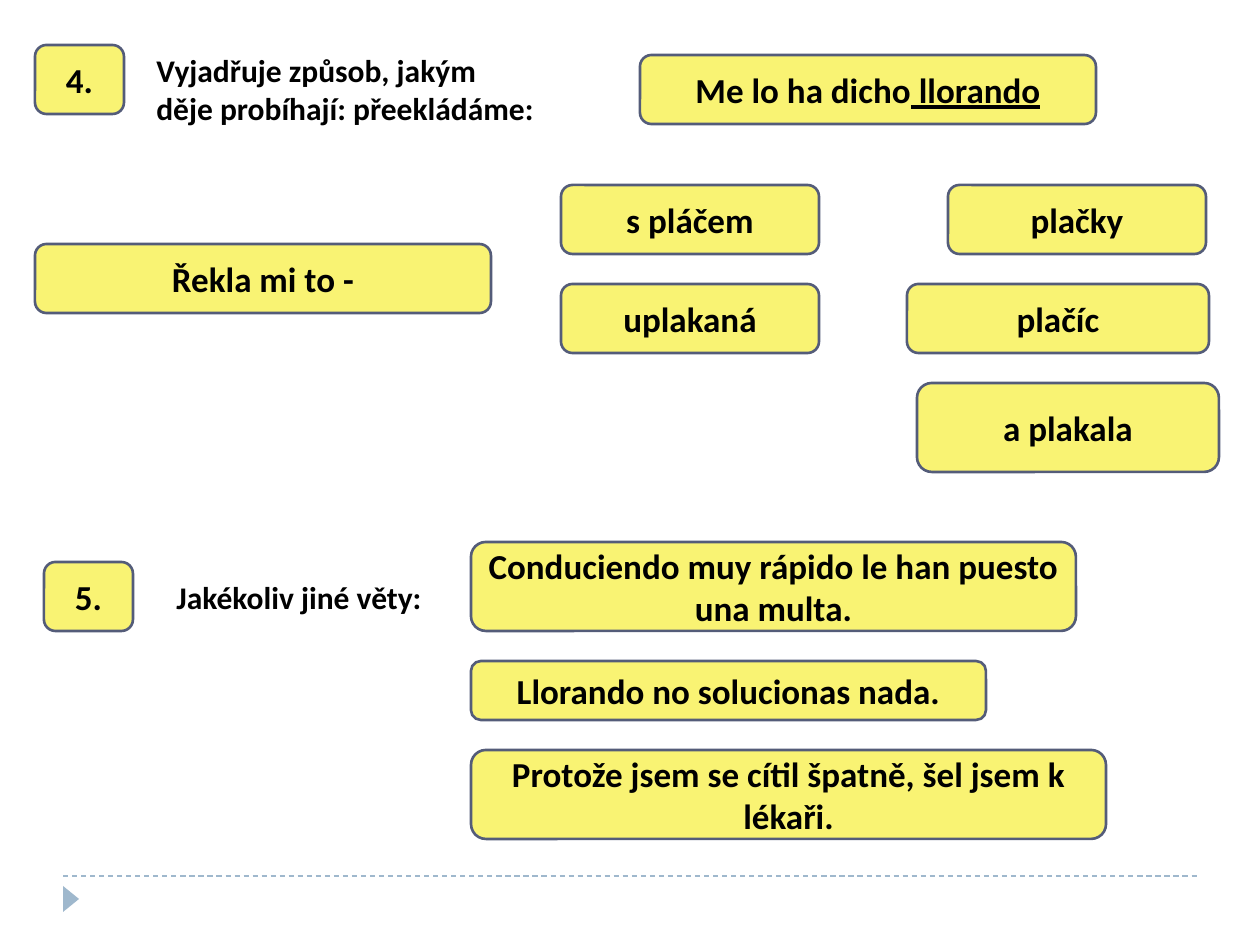
from dataclasses import dataclass

from lxml.etree import SubElement
from pptx import Presentation
from pptx.dml.color import RGBColor
from pptx.enum.dml import MSO_LINE
from pptx.enum.shapes import MSO_CONNECTOR, MSO_SHAPE
from pptx.enum.text import MSO_ANCHOR, MSO_AUTO_SIZE, PP_ALIGN
from pptx.oxml.ns import qn
from pptx.util import Pt

SCALE = 914400 / 126


@dataclass(frozen=True)
class Theme:
    fill: RGBColor = RGBColor(0xF9, 0xF3, 0x73)
    edge: RGBColor = RGBColor(0x54, 0x5C, 0x79)
    ink: RGBColor = RGBColor(0, 0, 0)
    foot: RGBColor = RGBColor(0x9F, 0xB8, 0xCD)
    font: str = "Calibri"
    card: int = 20
    label: int = 18


THEME = Theme()
ROW = 69
TALL = 89
SIDE = 471

# left, top, width, height, text, underlined text
CARDS = [
    (35, 45, 89, ROW, "4.", ""),
    (640, 55, 456, ROW, "Me lo ha dicho", " llorando"),
    (35, 244, 456, ROW, "Řekla mi to -", ""),
    (561, 185, 258, ROW, "s pláčem", ""),
    (561, 284, 258, ROW, "uplakaná", ""),
    (948, 185, 258, ROW, "plačky", ""),
    (907, 284, 302, ROW, "plačíc", ""),
    (917, 383, 302, TALL, "a plakala", ""),
    (44, 562, 89, ROW, "5.", ""),
    (SIDE, 542, 605, TALL,
     "Conduciendo muy rápido le han puesto una multa.", ""),
    (SIDE, 661, 515, 59, "Llorando no solucionas nada.", ""),
    (SIDE, 750, 635, TALL,
     "Protože jsem se cítil špatně, šel jsem k lékaři.", ""),
]
LABELS = [
    (144, 45, 444, 89,
     ["Vyjadřuje způsob, jakým", "děje probíhají: přeekládáme:"]),
    (164, 572, 299, 50, ["Jakékoliv jiné věty:"]),
]


def px(*vals):
    return [round(val * SCALE) for val in vals]


def style(item, form):
    for name, val in form.items():
        setattr(item, name, val)


def write(para, text, size, line=False):
    run = para.add_run()
    run.text = text
    style(run.font, {"name": THEME.font, "size": Pt(size), "bold": True})
    run.font.color.rgb = THEME.ink
    if line:
        run.font.underline = True


def paint(shape, color):
    shape.shadow.inherit = False
    shape.fill.solid()
    shape.fill.fore_color.rgb = color


def card(slide, left, top, width, height, text, under):
    shape = slide.shapes.add_shape(
        MSO_SHAPE.ROUNDED_RECTANGLE, *px(left, top, width, height))
    paint(shape, THEME.fill)
    shape.line.color.rgb = THEME.edge
    shape.line.width = Pt(1.5)
    frame = shape.text_frame
    style(frame, {"word_wrap": True, "vertical_anchor": MSO_ANCHOR.MIDDLE})
    para = frame.paragraphs[0]
    para.alignment = PP_ALIGN.CENTER
    write(para, text, THEME.card)
    if under:
        write(para, under, THEME.card, True)


def label(slide, left, top, width, height, lines):
    frame = slide.shapes.add_textbox(*px(left, top, width, height)).text_frame
    style(frame, {"word_wrap": False,
                  "auto_size": MSO_AUTO_SIZE.SHAPE_TO_FIT_TEXT})
    for num, text in enumerate(lines):
        para = frame.add_paragraph() if num else frame.paragraphs[0]
        para.alignment = PP_ALIGN.LEFT
        write(para, text, THEME.label)


def footer(slide):
    """Draw the dashed rule and the small arrow under it."""
    rule = slide.shapes.add_connector(
        MSO_CONNECTOR.STRAIGHT, *px(63, 876, 1197, 876))
    rule.line.color.rgb = THEME.foot
    style(rule.line, {"width": Pt(0.75), "dash_style": MSO_LINE.DASH})
    SubElement(rule._element.spPr, qn("a:effectLst"))
    mark = slide.shapes.add_shape(
        MSO_SHAPE.ISOSCELES_TRIANGLE, *px(58, 891, 26, 16))
    paint(mark, THEME.foot)
    mark.line.fill.background()
    mark.rotation = 90


def main():
    deck = Presentation()
    wide, high = px(1260, 945)
    style(deck, {"slide_width": wide, "slide_height": high})
    slide = deck.slides.add_slide(deck.slide_layouts[6])
    footer(slide)
    for item in CARDS:
        card(slide, *item)
    for item in LABELS:
        label(slide, *item)
    deck.save("out.pptx")


if __name__ == "__main__":
    main()
